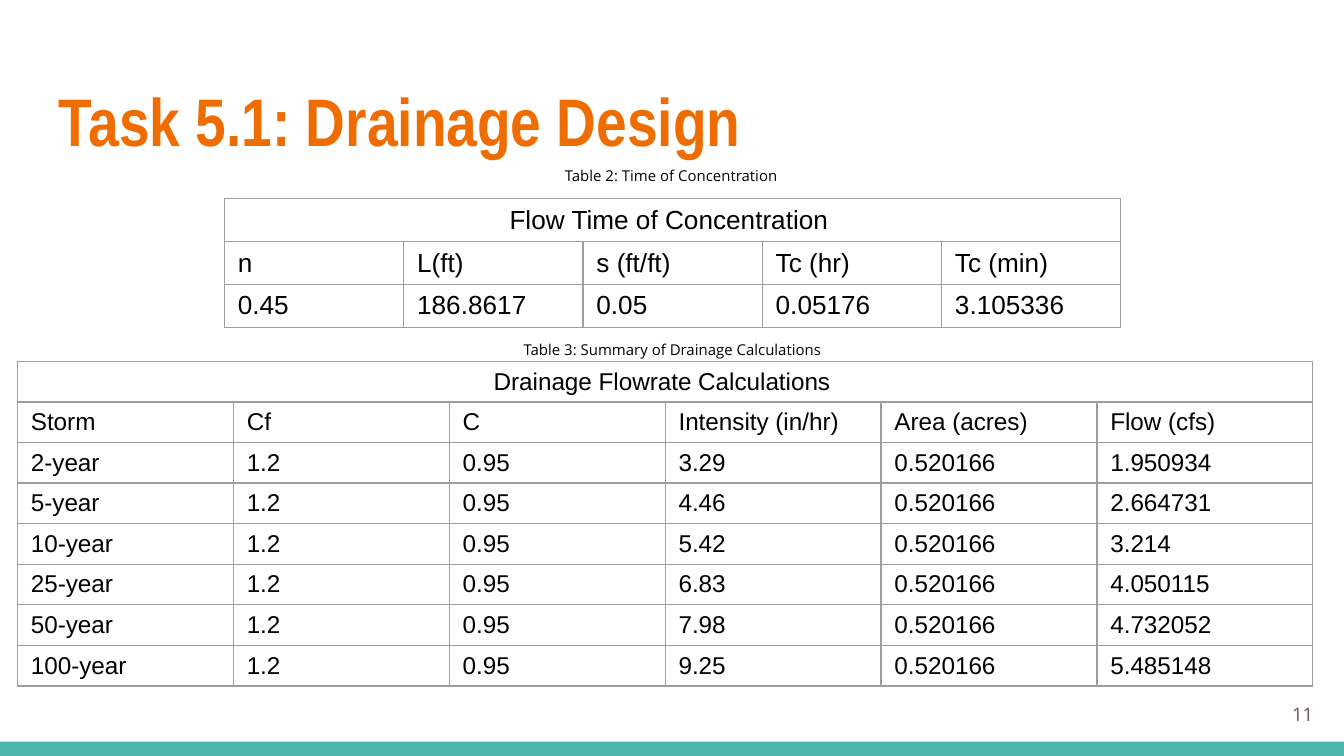
from dataclasses import dataclass

from pptx import Presentation
from pptx.dml.color import RGBColor
from pptx.enum.shapes import MSO_SHAPE as Shape
from pptx.enum.text import MSO_ANCHOR as Anchor, PP_ALIGN as Align
from pptx.oxml import parse_xml
from pptx.oxml.ns import nsdecls
from pptx.util import Inches, Pt


@dataclass(frozen=True)
class Theme:
    title: str = "EF6C00"
    ink: str = "000000"
    muted: str = "695D46"
    accent: str = "4DB6AC"
    border: str = "9E9E9E"
    border_width: float = 0.75
    title_font: str = "Arial Narrow"
    body_font: str = "Open Sans"
    table_font: str = "Arial"
    title_size: int = 36
    caption_size: int = 8
    number_size: int = 10
    flow_time_size: int = 14
    flowrate_size: int = 13


class SlideBuilder:
    """Places elements in percent of the slide's width and height."""

    def __init__(self, deck, theme):
        self.theme = theme
        self.width, self.height = deck.slide_width, deck.slide_height
        self.page = deck.slides.add_slide(deck.slide_layouts[6])

    def area(self, left, top, width, height):
        return (round(self.width * left / 100), round(self.height * top / 100),
                round(self.width * width / 100), round(self.height * height / 100))

    def style(self, para, font, size, color, align=Align.LEFT, bold=False):
        para.alignment = align
        para.font.name, para.font.size, para.font.bold = font, Pt(size), bold
        para.font.color.rgb = RGBColor.from_string(color)

    def bar(self, *area, color):
        bar = self.page.shapes.add_shape(Shape.RECTANGLE, *self.area(*area))
        bar.shadow.inherit = False
        bar.fill.solid()
        bar.fill.fore_color.rgb = RGBColor.from_string(color)
        bar.line.fill.background()

    def text(self, words, *area, anchor=Anchor.TOP, **style):
        frame = self.page.shapes.add_textbox(*self.area(*area)).text_frame
        frame.word_wrap = True
        frame.vertical_anchor = anchor
        frame.margin_left = frame.margin_right = Inches(0.1)
        frame.margin_top = frame.margin_bottom = Inches(0.1)
        para = frame.paragraphs[0]
        para.text = words
        self.style(para, **style)

    def caption(self, words, *area):
        self.text(words, *area, font=self.theme.body_font, color=self.theme.ink,
                  size=self.theme.caption_size, align=Align.CENTER)

    def table(self, heading, rows, *area, size):
        """Draws a grid whose first row is one merged heading."""
        columns = len(rows[0])
        grid = [[heading] + [""] * (columns - 1), *rows]
        frame = self.page.shapes.add_table(len(grid), columns, *self.area(*area))
        table = frame.table
        table.first_row = table.horz_banding = False
        table.cell(0, 0).merge(table.cell(0, columns - 1))
        for r, row in enumerate(grid):
            for c, words in enumerate(row):
                cell = table.cell(r, c)
                cell.margin_left = cell.margin_right = Inches(0.1)
                cell.margin_top = cell.margin_bottom = Inches(0.03)
                cell.vertical_anchor = Anchor.MIDDLE
                para = cell.text_frame.paragraphs[0]
                para.text = words
                self.style(para, self.theme.table_font, size, self.theme.ink,
                           Align.LEFT if r else Align.CENTER)
                self.borders(cell)
                cell.fill.background()

    def borders(self, cell):
        properties = cell._tc.get_or_add_tcPr()
        for side in ("lnL", "lnR", "lnT", "lnB"):
            properties.append(parse_xml(
                f'<a:{side} {nsdecls("a")} w="{Pt(self.theme.border_width)}">'
                f'<a:solidFill><a:srgbClr val="{self.theme.border}"/></a:solidFill>'
                f'</a:{side}>'))


FLOW_TIME = [
    ["n", "L(ft)", "s (ft/ft)", "Tc (hr)", "Tc (min)"],
    ["0.45", "186.8617", "0.05", "0.05176", "3.105336"],
]
STORMS = [
    ("2-year", "3.29", "1.950934"),
    ("5-year", "4.46", "2.664731"),
    ("10-year", "5.42", "3.214"),
    ("25-year", "6.83", "4.050115"),
    ("50-year", "7.98", "4.732052"),
    ("100-year", "9.25", "5.485148"),
]
FLOWRATES = [["Storm", "Cf", "C", "Intensity (in/hr)", "Area (acres)", "Flow (cfs)"]]
FLOWRATES += [[storm, "1.2", "0.95", intensity, "0.520166", flow]
              for storm, intensity, flow in STORMS]


def main():
    deck = Presentation()
    deck.slide_width, deck.slide_height = Inches(10), Inches(5.625)
    theme = Theme()
    slide = SlideBuilder(deck, theme)

    # Footer bar and title
    slide.bar(0, 98.1, 100, 1.9, color=theme.accent)
    slide.text("Task 5.1: Drainage Design", 3.4, 8.7, 93.2, 13.7, bold=True,
               font=theme.title_font, size=theme.title_size, color=theme.title)

    # Captions
    slide.caption("Table 2: Time of Concentration", 40.2, 20.8, 19.5, 4.6)
    slide.caption("Table 3: Summary of Drainage Calculations", 37.8, 43.9, 24.5, 4.6)

    # Slide number
    slide.text("11", 92.7, 90.7, 6, 7.6, anchor=Anchor.MIDDLE, align=Align.RIGHT,
               font=theme.body_font, size=theme.number_size, color=theme.muted)

    # Tables
    slide.table("Flow Time of Concentration ", FLOW_TIME,
                16.7, 26.3, 66.7, 17, size=theme.flow_time_size)
    slide.table("Drainage Flowrate Calculations ", FLOWRATES,
                1.3, 47.8, 96.4, 43, size=theme.flowrate_size)

    deck.save("out.pptx")


if __name__ == "__main__":
    main()
